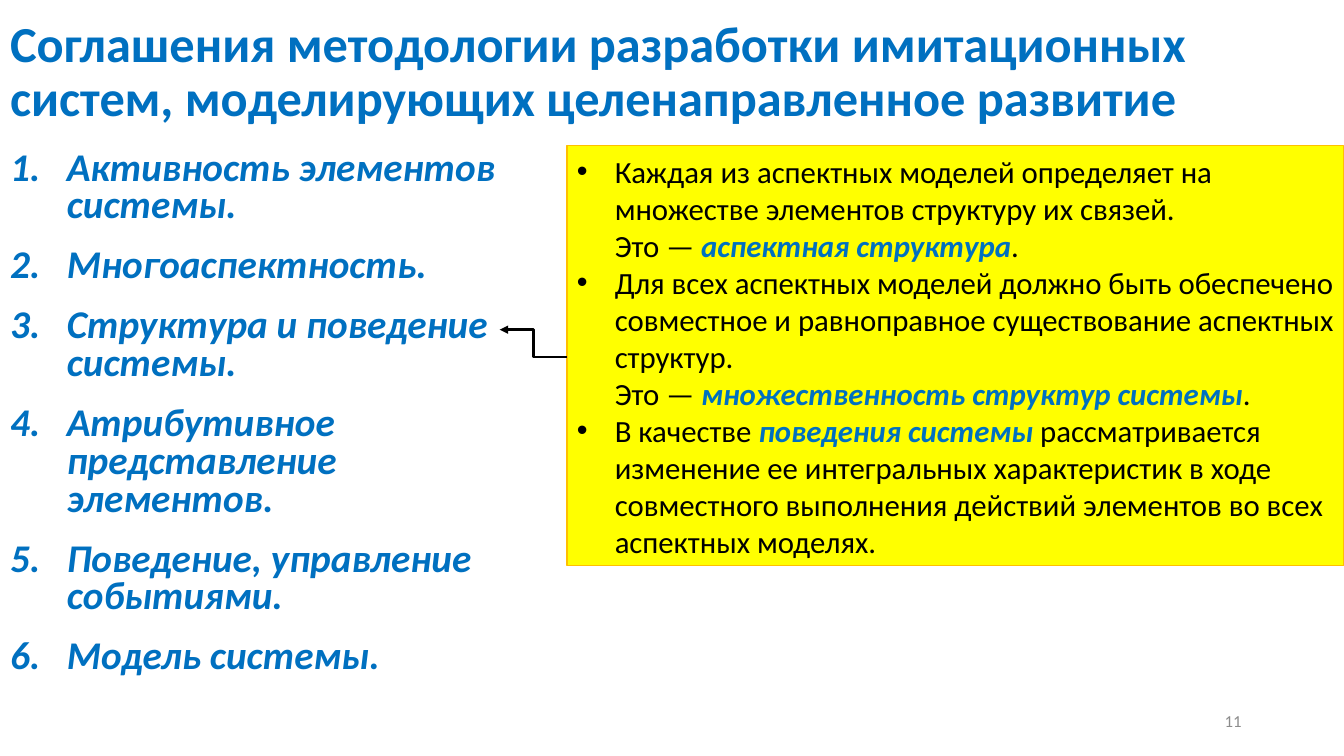
from copy import deepcopy

from lxml import etree
from pptx import Presentation
from pptx.dml.color import RGBColor
from pptx.enum.shapes import MSO_CONNECTOR, MSO_SHAPE
from pptx.enum.text import MSO_ANCHOR, MSO_AUTO_SIZE, PP_ALIGN
from pptx.oxml.ns import qn
from pptx.util import Pt

PX = 9525
FONT = "Calibri"
COLORS = {
    "accent": "0070C0",
    "text": "000000",
    "number": "8C8C8C",
    "panel": "FFFF00",
    "border": "FFC000",
}
LEFT, RIGHT = PP_ALIGN.LEFT, PP_ALIGN.RIGHT
TOP, MIDDLE = MSO_ANCHOR.TOP, MSO_ANCHOR.MIDDLE
NO_AUTOFIT, GROW = MSO_AUTO_SIZE.NONE, MSO_AUTO_SIZE.SHAPE_TO_FIT_TEXT
ELBOW, RECTANGLE = MSO_CONNECTOR.ELBOW, MSO_SHAPE.RECTANGLE


def color(name):
    return RGBColor.from_string(COLORS[name])


def write(frame, paragraphs, size, fill="text", bold=False, italic=False, align=LEFT,
          anchor=TOP, autosize=NO_AUTOFIT, line=1.0, before=0, after=0, indent=0, bullet=None):
    """Fill a frame; every second part of a paragraph split at * is emphasised."""
    frame.word_wrap = True
    frame.auto_size = autosize
    frame.vertical_anchor = anchor
    for index, content in enumerate(paragraphs):
        paragraph = frame.add_paragraph() if index else frame.paragraphs[0]
        paragraph.alignment = align
        paragraph.line_spacing = line
        paragraph.space_before = Pt(before if index else 0)
        paragraph.space_after = Pt(after)
        if bullet:
            properties = paragraph._p.get_or_add_pPr()
            properties.set("marL", str(indent * PX))
            properties.set("indent", str(-indent * PX))
            tag, attribute, value = bullet
            if tag == "a:buChar":
                etree.SubElement(properties, qn("a:buFont")).set("typeface", "Arial")
            etree.SubElement(properties, qn(tag)).set(attribute, value)
        for part, segment in enumerate(content.split("*")):
            emphasised = part % 2 == 1
            for row, words in enumerate(segment.split("\n")):
                if row:
                    paragraph.add_line_break()
                run = paragraph.add_run()
                run.text = words
                font = run.font
                font.name, font.size = FONT, Pt(size)
                font.bold, font.italic = bold or emphasised, italic or emphasised
                font.color.rgb = color("accent" if emphasised else fill)
                if row:
                    line_break = paragraph._p.findall(qn("a:br"))[-1]
                    line_break.append(deepcopy(run._r.rPr))


def place(shape, left, top, width, height):
    shape.left, shape.top = left * PX, top * PX
    shape.width, shape.height = width * PX, height * PX


presentation = Presentation()
presentation.slide_width, presentation.slide_height = 1280 * PX, 720 * PX
slide = presentation.slides.add_slide(presentation.slide_layouts[1])

title = slide.shapes.title
place(title, 0, 0, 1257, 139)
write(title.text_frame,
      ["Соглашения методологии разработки имитационных систем, "
       "моделирующих целенаправленное развитие"],
      36, fill="accent", bold=True, anchor=MIDDLE, line=0.9)

conventions = slide.placeholders[1]
place(conventions, 0, 139, 1257, 513)
write(conventions.text_frame,
      ["Активность элементов \nсистемы.",
       "Многоаспектность.",
       "Структура и поведение\nсистемы.",
       "Атрибутивное \nпредставление \nэлементов.",
       "Поведение, управление \nсобытиями.",
       "Модель системы."],
      28, fill="accent", bold=True, italic=True, line=0.8, before=10, after=6,
      indent=54, bullet=("a:buAutoNum", "type", "arabicPeriod"))

explanation = slide.shapes.add_shape(RECTANGLE, 540 * PX, 139 * PX, 740 * PX, 400 * PX)
explanation.shadow.inherit = False
explanation.fill.solid()
explanation.fill.fore_color.rgb = color("panel")
explanation.line.color.rgb = color("border")
explanation.line.width = Pt(0.75)
write(explanation.text_frame,
      ["Каждая из аспектных моделей определяет на множестве элементов "
       "структуру их связей. \nЭто — *аспектная структура*.",
       "Для всех аспектных моделей должно быть обеспечено совместное и "
       "равноправное существование аспектных структур. \n"
       "Это — *множественность структур системы*.",
       "В качестве *поведения системы *рассматривается изменение ее "
       "интегральных характеристик в ходе совместного выполнения действий "
       "элементов во всех аспектных моделях."],
      22, anchor=MIDDLE, autosize=GROW, indent=36, bullet=("a:buChar", "char", "•"))

arrow = slide.shapes.add_connector(ELBOW, 540 * PX, 340 * PX, 476 * PX, 314 * PX)
arrow.line.color.rgb = color("text")
arrow.line.width = Pt(2)
etree.SubElement(arrow.line._get_or_add_ln(), qn("a:tailEnd")).set("type", "triangle")
etree.SubElement(arrow._element.spPr, qn("a:effectLst"))

page_number = slide.shapes.add_textbox(904 * PX, 667 * PX, 288 * PX, 38 * PX)
write(page_number.text_frame, ["11"], 12, fill="number", align=RIGHT, anchor=MIDDLE)

presentation.save("out.pptx")
